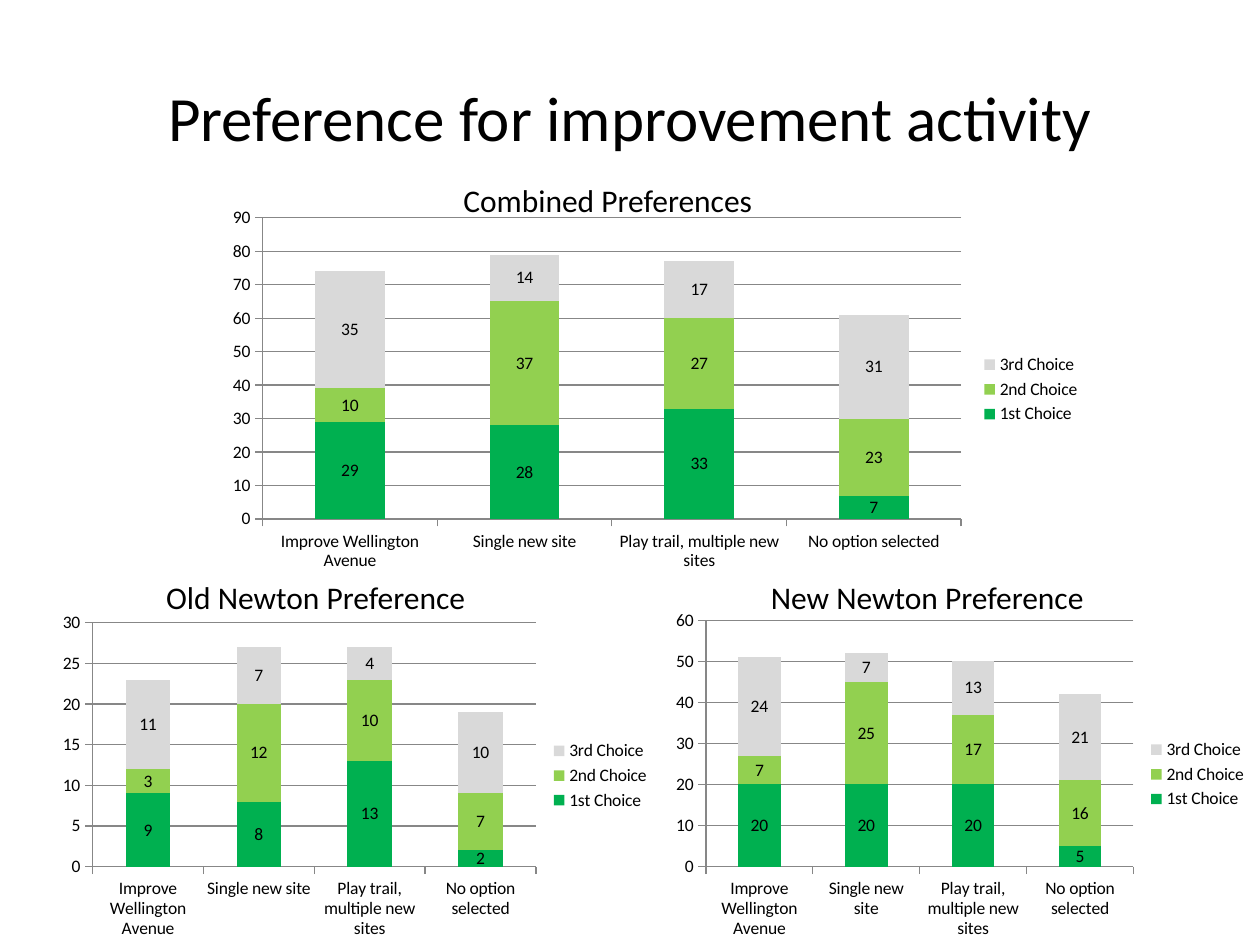
from pptx import Presentation
from pptx import util as u
from pptx.chart import data as chart_data
from pptx.dml.color import RGBColor
from pptx.enum import chart as ce
from pptx.enum import text

CATEGORIES = ["Improve Wellington Avenue", "Single new site",
              "Play trail, multiple new sites", "No option selected"]
CHOICES = [("1st Choice", "00B050"), ("2nd Choice", "92D050"), ("3rd Choice", "D9D9D9")]


def colour(value):
    return RGBColor.from_string(value)


def place(left, top, width, height):
    return [u.Cm(length) for length in (left, top, width, height)]


class SlideBuilder:
    font_name = "Calibri"
    ink = "000000"
    rule = "878787"

    def __init__(self, slide):
        self.slide = slide

    def style_font(self, font, size):
        font.name = self.font_name
        font.size = u.Pt(size)
        font.bold = False
        font.color.rgb = colour(self.ink)

    def add_text(self, words, box, size, align=text.PP_ALIGN.LEFT,
                 anchor=text.MSO_ANCHOR.TOP):
        frame = self.slide.shapes.add_textbox(*place(*box)).text_frame
        frame.word_wrap = True
        frame.vertical_anchor = anchor
        paragraph = frame.paragraphs[0]
        paragraph.alignment = align
        run = paragraph.add_run()
        run.text = words
        self.style_font(run.font, size)

    def style_line(self, line):
        line.color.rgb = colour(self.rule)
        line.width = u.Pt(0.75)

    def add_stacked_columns(self, box, rows, maximum, step):
        data = chart_data.CategoryChartData()
        data.categories = CATEGORIES
        for (name, _), values in zip(CHOICES, rows):
            data.add_series(name, values)
        chart = self.slide.shapes.add_chart(
            ce.XL_CHART_TYPE.COLUMN_STACKED, *place(*box), data).chart
        self.style_font(chart.font, 10)
        chart.has_title = False
        chart.has_legend = True
        chart.legend.position = ce.XL_LEGEND_POSITION.RIGHT
        chart.legend.include_in_layout = False

        # Axes
        for axis in (chart.category_axis, chart.value_axis):
            axis.major_tick_mark = ce.XL_TICK_MARK.OUTSIDE
            axis.minor_tick_mark = ce.XL_TICK_MARK.NONE
            self.style_line(axis.format.line)
        values_axis = chart.value_axis
        values_axis.minimum_scale = 0
        values_axis.maximum_scale = maximum
        values_axis.major_unit = step
        values_axis.has_major_gridlines = True
        self.style_line(values_axis.major_gridlines.format.line)

        # Columns and their labels
        plot = chart.plots[0]
        plot.gap_width = 150
        plot.overlap = 100
        plot.vary_by_categories = False
        for series, (_, fill) in zip(plot.series, CHOICES):
            series.format.fill.solid()
            series.format.fill.fore_color.rgb = colour(fill)
            labels = series.data_labels
            labels.show_value = True
            labels.position = ce.XL_LABEL_POSITION.CENTER
            self.style_font(labels.font, 10)


def main():
    presentation = Presentation()
    presentation.slide_width = u.Cm(25.4)
    presentation.slide_height = u.Cm(19.05)
    builder = SlideBuilder(presentation.slides.add_slide(presentation.slide_layouts[6]))

    # Title
    builder.add_text("Preference for improvement activity", (1.27, 0.76, 22.86, 3.18), 36,
                     text.PP_ALIGN.CENTER, text.MSO_ANCHOR.MIDDLE)

    # Each panel: heading, its corner, chart box, values by choice, axis maximum and step
    panels = [
        ("Combined Preferences", (9.09, 3.53), (4.34, 4.04, 17.7, 7.62),
         [(29, 28, 33, 7), (10, 37, 27, 23), (35, 14, 17, 31)], 90, 10),
        ("Old Newton Preference", (3.1, 11.53), (1.02, 12.22, 12.34, 6.83),
         [(9, 8, 13, 2), (3, 12, 10, 7), (11, 7, 4, 10)], 30, 5),
        ("New Newton Preference", (15.29, 11.53), (13.39, 12.17, 12.01, 6.88),
         [(20, 20, 20, 5), (7, 25, 17, 16), (24, 7, 13, 21)], 60, 10),
    ]
    for heading, corner, box, rows, maximum, step in panels:
        builder.add_text(heading, (*corner, 8.2, 1.02), 18)
        builder.add_stacked_columns(box, rows, maximum, step)

    presentation.save("out.pptx")


if __name__ == "__main__":
    main()
